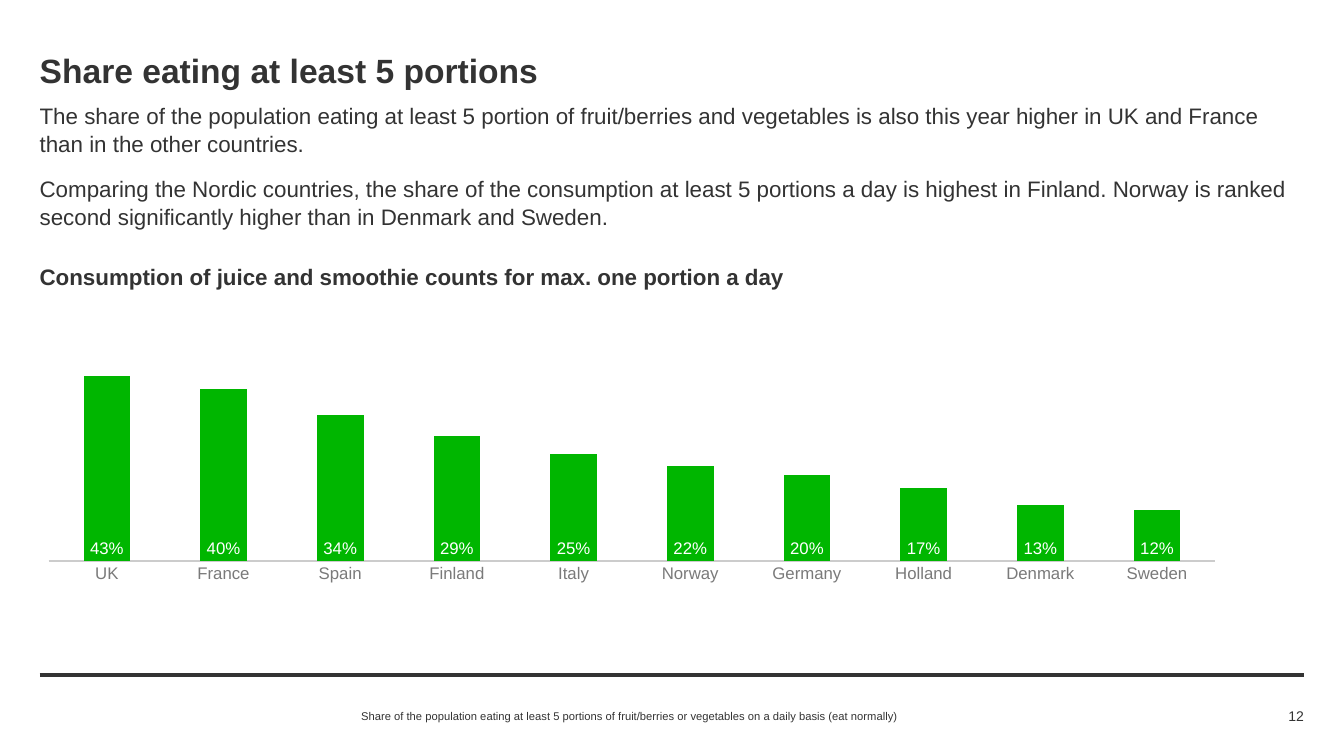
import pptx
import pptx.util
import pptx.chart.data
import pptx.dml.color
import pptx.enum.chart
import pptx.enum.shapes
import pptx.enum.text
import pptx.oxml
import pptx.oxml.ns
from pptx.util import Cm

HUES = {"ink": "333333", "grey": "7A7A7A", "axis": "CCCCCC",
        "green": "00B600", "white": "FFFFFF"}
FACE = "Arial"
LEFT, WIDE = 1, 31.86
SHARES = {"UK": 0.43, "France": 0.4, "Spain": 0.34, "Finland": 0.29,
          "Italy": 0.25, "Norway": 0.22, "Germany": 0.2, "Holland": 0.17,
          "Denmark": 0.13, "Sweden": 0.12}
PLOT = {"x": 0.007, "y": 0.111, "w": 0.923, "h": 0.817}


def color(name):
    return pptx.dml.color.RGBColor.from_string(HUES[name])


def style(font, size, hue="ink", bold=False):
    font.name = FACE
    font.size = pptx.util.Pt(size)
    font.bold = bold
    font.color.rgb = color(hue)


def fill_text(shape, box, lines, size, bold=False, anchor="TOP",
              align="LEFT", pitch=1.05, gap=12):
    shape.left, shape.top, shape.width, shape.height = map(Cm, box)
    frame = shape.text_frame
    frame.margin_left = frame.margin_right = 0
    frame.margin_top = frame.margin_bottom = 0
    frame.word_wrap = True
    frame.auto_size = pptx.enum.text.MSO_AUTO_SIZE.NONE
    frame.vertical_anchor = getattr(pptx.enum.text.MSO_ANCHOR, anchor)
    frame.text = "\n".join(lines)
    for index, para in enumerate(frame.paragraphs):
        para.alignment = getattr(pptx.enum.text.PP_ALIGN, align)
        para.line_spacing = pitch
        para.space_before = pptx.util.Pt(gap if index else 0)
        for run in para.runs:
            style(run.font, size, bold=bold)


def add_text(slide, box, lines, size, **opts):
    shape = slide.shapes.add_textbox(*map(Cm, box))
    fill_text(shape, box, lines, size, **opts)


def add_head(slide, box):
    left, top, wide, high = box
    fill_text(slide.shapes.title, (left, top, wide, 1.12),
              ["Share eating at least 5 portions"], 24, bold=True)
    add_text(slide, (left, top + 1.34, wide, 2.62), [
        "The share of the population eating at least 5 portion of "
        "fruit/berries and vegetables is also this year higher in UK and "
        "France than in the other countries.",
        "Comparing the Nordic countries, the share of the consumption at "
        "least 5 portions a day is highest in Finland. Norway is ranked "
        "second significantly higher than in Denmark and Sweden."], 16)
    add_text(slide, (left, top + high - 1.68, wide, 1.68),
             ["Consumption of juice and smoothie counts for max. "
              "one portion a day"], 16, bold=True)


def place_plot(chart):
    area = chart._chartSpace.xpath(".//c:plotArea")[0]
    for old in area.xpath("./c:layout"):
        area.remove(old)
    modes = "".join(f'<c:{key}Mode val="edge"/>' for key in "xy")
    sizes = "".join(f'<c:{key} val="{val}"/>' for key, val in PLOT.items())
    area.insert(0, pptx.oxml.parse_xml(
        f'<c:layout {pptx.oxml.ns.nsdecls("c")}><c:manualLayout>'
        f'<c:layoutTarget val="inner"/>{modes}{sizes}'
        '</c:manualLayout></c:layout>'))


def add_bars(slide, box):
    enums = pptx.enum.chart
    data = pptx.chart.data.CategoryChartData(number_format="0%")
    data.categories = list(SHARES)
    data.add_series("Series 1", list(SHARES.values()))
    chart = slide.shapes.add_chart(enums.XL_CHART_TYPE.COLUMN_STACKED,
                                   *map(Cm, box), data).chart
    chart.has_title = chart.has_legend = False
    style(chart.font, 10)
    place_plot(chart)

    plot = chart.plots[0]
    plot.gap_width, plot.overlap = 150, 100
    plot.vary_by_categories = False
    bars = plot.series[0]
    bars.format.fill.solid()
    bars.format.fill.fore_color.rgb = color("green")
    labels = bars.data_labels
    labels.show_value = True
    labels.number_format = "0%"
    labels.number_format_is_linked = False
    labels.position = enums.XL_LABEL_POSITION.INSIDE_BASE
    style(labels.font, 12, "white")

    axis = chart.category_axis
    axis.major_tick_mark = axis.minor_tick_mark = enums.XL_TICK_MARK.NONE
    axis.has_major_gridlines = False
    axis.format.line.color.rgb = color("axis")
    axis.format.line.width = pptx.util.Pt(1.5)
    style(axis.tick_labels.font, 12, "grey")

    scale = chart.value_axis
    scale.minimum_scale, scale.maximum_scale = -0.1, 0.6
    scale.has_major_gridlines = False
    scale.visible = False


def add_foot(slide, box):
    left, top, wide, high = box
    rule = slide.shapes.add_connector(
        pptx.enum.shapes.MSO_CONNECTOR.STRAIGHT,
        Cm(left), Cm(top), Cm(left + wide), Cm(top))
    rule.line.color.rgb = color("ink")
    rule.line.width = pptx.util.Pt(3)
    props = rule._element.spPr
    props.append(pptx.oxml.parse_xml(
        f'<a:effectLst {pptx.oxml.ns.nsdecls("a")}/>'))
    row = top + high - 0.56
    add_text(slide, (left + 8.1, row, 20.83, 0.56),
             ["Share of the population eating at least 5 portions of "
              "fruit/berries or vegetables on a daily basis (eat normally)"],
             8, anchor="MIDDLE", pitch=1)
    add_text(slide, (left + wide - 2.7, row, 2.7, 0.56), ["12"], 10,
             anchor="MIDDLE", align="RIGHT", pitch=1)


def main():
    deck = pptx.Presentation()
    deck.slide_width, deck.slide_height = Cm(33.87), Cm(19.05)
    slide = deck.slides.add_slide(deck.slide_layouts[5])
    add_head(slide, (LEFT, 1.2, WIDE, 7.08))
    add_bars(slide, (LEFT, 6.6, WIDE, 9.3))
    add_foot(slide, (LEFT, 17, WIDE, 1.32))
    deck.save("out.pptx")


if __name__ == "__main__":
    main()
